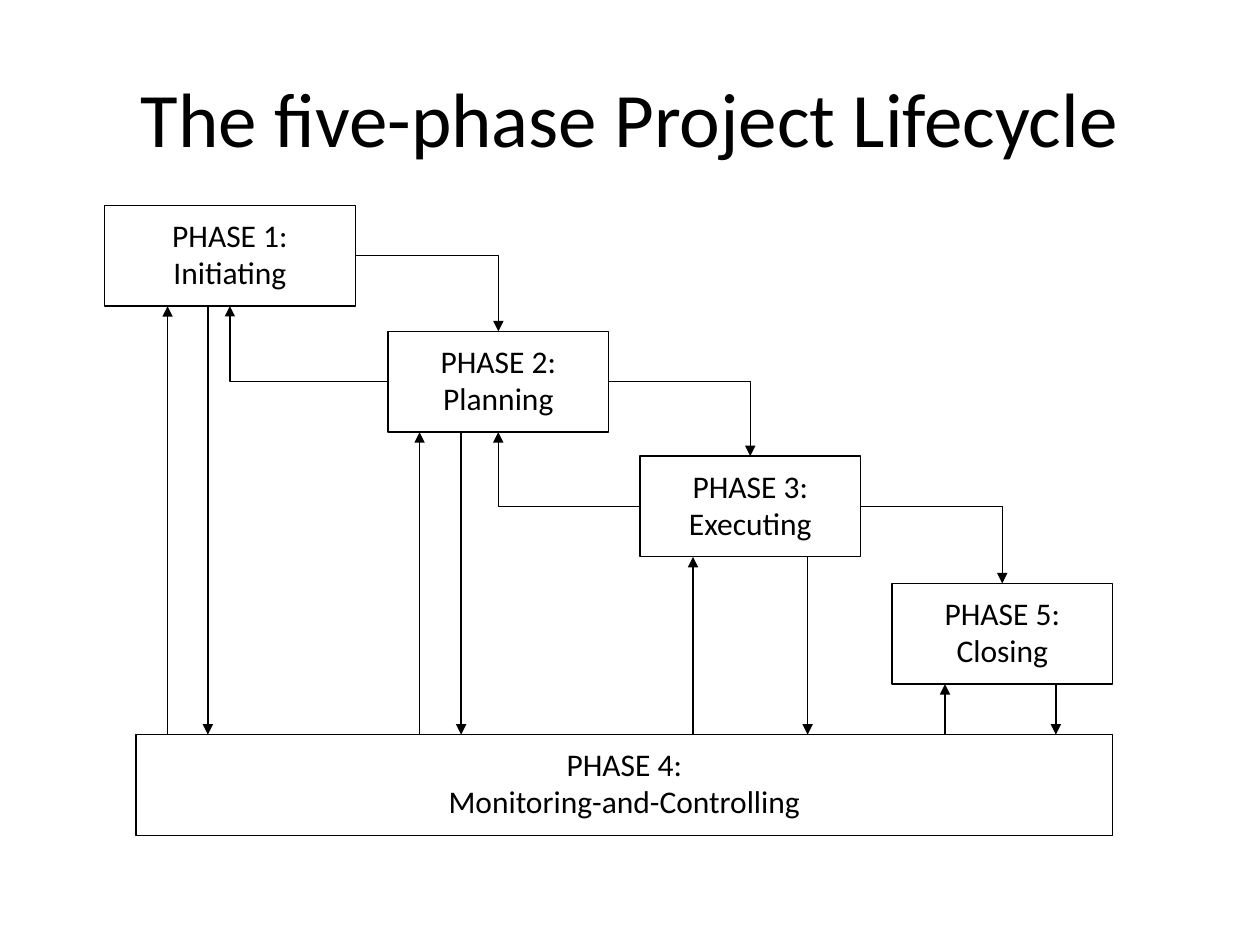
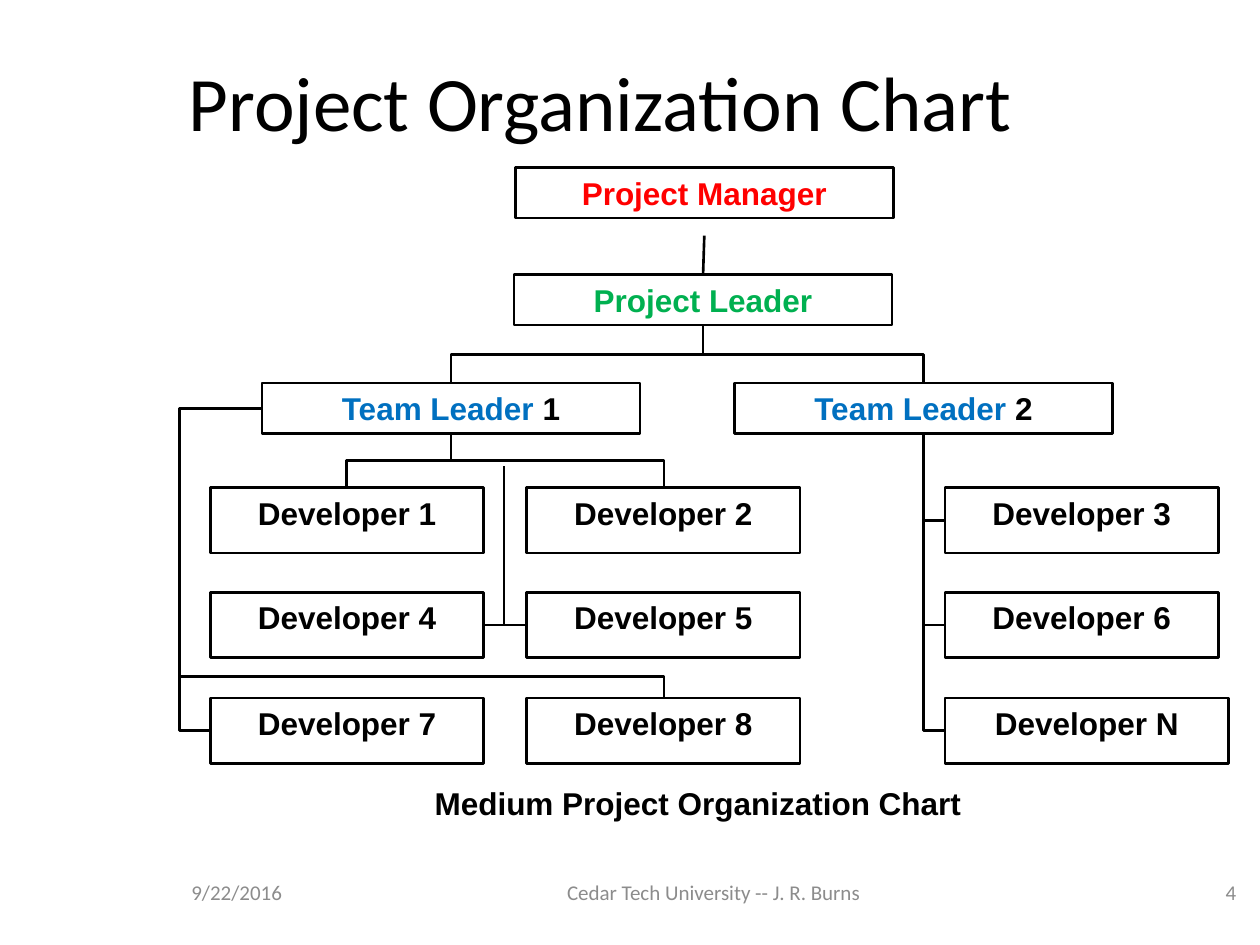
from pptx import Presentation
from pptx.util import Inches, Pt
from pptx.dml.color import RGBColor
from pptx.enum.shapes import MSO_SHAPE as Shape, MSO_CONNECTOR as Conn
from pptx.enum.text import PP_ALIGN as Align, MSO_ANCHOR as Anchor
from pptx.oxml.ns import qn
from lxml import etree

HUES = {"ink": "000000", "grey": "8C8C8C", "red": "FF0000",
        "green": "00B050", "blue": "0070C0"}
TITLE = {"size": 44}
FOOT = {"size": 12}
PHASE = {"line": 0.75, "tight": True}
ROLE = {"font": "Arial", "bold": True, "anchor": Anchor.TOP}


def put(slide, at, paras, font="Calibri", size=18, bold=False, line=None,
        align=Align.CENTER, anchor=Anchor.MIDDLE, tight=False):
    """Place text, boxed if a line width is given; a paragraph is a list of (text, hue)."""
    spot = [Inches(n) for n in at]
    if line:
        item = slide.shapes.add_shape(Shape.RECTANGLE, *spot)
        item.shadow.inherit = False
        item.fill.background()
        item.line.color.rgb = RGBColor.from_string(HUES["ink"])
        item.line.width = Pt(line)
    else:
        item = slide.shapes.add_textbox(*spot)
    frame = item.text_frame
    frame.word_wrap = True
    frame.vertical_anchor = anchor
    for i, runs in enumerate(paras):
        para = frame.add_paragraph() if i else frame.paragraphs[0]
        para.alignment = align
        if tight:
            para.line_spacing = 0.9
            para.space_before = Pt(size * 0.1)
        for text, hue in runs:
            run = para.add_run()
            run.text = text
            run.font.name, run.font.size, run.font.bold = font, Pt(size), bold
            run.font.color.rgb = RGBColor.from_string(HUES[hue])


def link(slide, start, end, form="line", width=1.5, arrow=False, bend=0.5):
    """Join two points: "line", "corner" (across, then down or up),
    "step" (across, down, across) or "fork" (down, across, down)."""
    (x1, y1), (x2, y2) = start, end
    if form == "fork":  # a step turned a quarter about its middle
        mx, my, dx, dy = (x1 + x2) / 2, (y1 + y2) / 2, (x2 - x1) / 2, (y2 - y1) / 2
        x1, y1, x2, y2 = mx - dy, my + dx, mx + dy, my - dx
    kind = Conn.STRAIGHT if form == "line" else Conn.ELBOW
    wire = slide.shapes.add_connector(kind, *[Inches(n) for n in (x1, y1, x2, y2)])
    wire.line.color.rgb = RGBColor.from_string(HUES["ink"])
    wire.line.width = Pt(width)
    props = wire._element.spPr
    geom = props.find(qn("a:prstGeom"))
    if form == "fork":
        props.find(qn("a:xfrm")).set("rot", "5400000")
    if form == "corner":
        geom.set("prst", "bentConnector2")
    elif bend != 0.5:
        guide = etree.SubElement(geom.find(qn("a:avLst")), qn("a:gd"))
        guide.set("name", "adj1")
        guide.set("fmla", f"val {round(bend * 100000)}")
    if arrow:
        etree.SubElement(props.find(qn("a:ln")), qn("a:tailEnd")).set("type", "triangle")
    etree.SubElement(props, qn("a:effectLst"))


deck = Presentation()
deck.slide_width, deck.slide_height = Inches(10), Inches(7.5)
blank = deck.slide_layouts[6]

# Slide 1: lifecycle
life = deck.slides.add_slide(blank)
put(life, (0.5, 0.3, 9, 1.25), [[("The five-phase Project Lifecycle", "ink")]], **TITLE)

# Phase boxes
tall, base = 0.8, 5.83
steps = [(1, "Initiating", 0.83, 1.63, 1.99), (2, "Planning", 3.08, 2.63, 1.75),
         (3, "Executing", 5.08, 3.62, 1.75), (5, "Closing", 7.08, 4.63, 1.75)]
for num, name, x, y, wide in steps + [(4, "Monitoring-and-Controlling", 1.08, base, 7.75)]:
    put(life, (x, y, wide, tall), [[(f"PHASE {num}:", "ink")], [(name, "ink")]], **PHASE)

# Arrows on to the next phase, and back from all but the last
for (_, _, x, y, wide), (num, _, nx, ny, nw) in zip(steps, steps[1:]):
    link(life, (x + wide, y + tall / 2), (nx + nw / 2, ny), "corner", 0.75, True)
    if num < 5:
        link(life, (nx, ny + tall / 2), (x + wide / 2, y + tall), "corner", 0.75, True)

# Arrows up from and down to monitoring
for (_, _, _, y, _), up, down in zip(steps, (1.33, 3.33, 5.5, 7.5), (1.65, 3.66, 6.41, 8.38)):
    link(life, (up, base), (up, y + tall), width=0.75, arrow=True)
    link(life, (down, y + tall), (down, base), width=0.75, arrow=True)

# Slide 2: organization chart
org = deck.slides.add_slide(blank)
for x, wide, text, side in [(1.42, 2.08, "9/22/2016", Align.LEFT),
                            (4.08, 3.17, "Cedar Tech University -- J. R. Burns", Align.CENTER),
                            (7.83, 2.08, "4", Align.RIGHT)]:
    put(org, (x, 6.83, wide, 0.5), [[(text, "grey")]], align=side, **FOOT)
put(org, (1.4, 0.17, 8.42, 1.25), [[("Project Organization Chart", "ink")]],
    align=Align.LEFT, **TITLE)

# Leaders
for x, y, runs in [(4.09, 1.33, [("Project Manager", "red")]),
                   (4.08, 2.18, [("Project Leader", "green")]),
                   (2.08, 3.04, [("Team Leader ", "blue"), ("1", "ink")]),
                   (5.83, 3.04, [("Team Leader ", "blue"), ("2", "ink")])]:
    put(org, (x, y, 3, 0.4), [runs], line=1.5, **ROLE)

# Developers, three by three
cols, rows = (1.67, 4.18, 7.5), (3.87, 4.7, 5.54)
for i in range(9):
    mark = "N" if i == 8 else i + 1
    wide = 2.25 if i == 8 else 2.17
    put(org, (cols[i % 3], rows[i // 3], wide, 0.52), [[(f"Developer {mark}", "ink")]],
        line=1.5, **ROLE)

# Lines between the levels
link(org, (5.59, 1.87), (5.58, 2.18))
for x in (3.58, 7.33):
    link(org, (5.58, 2.59), (x, 3.04), "fork")
for x in (2.75, 5.27):
    link(org, (3.58, 3.44), (x, 3.87), "fork")

# Lines to the lower developers
for x in (3.84, 4.18):
    link(org, (x, 4.96), (4, 3.7), "corner")
link(org, (2.08, 3.24), (1.67, 5.8), "step", bend=1.6)
link(org, (1.42, 5.37), (5.27, 5.54), "corner")
for y in rows:
    link(org, (7.5, y + 0.26), (7.33, 3.44), "corner")

put(org, (2.58, 6.17, 5.92, 0.5), [[("Medium Project Organization Chart", "ink")]], **ROLE)

deck.save("out.pptx")
